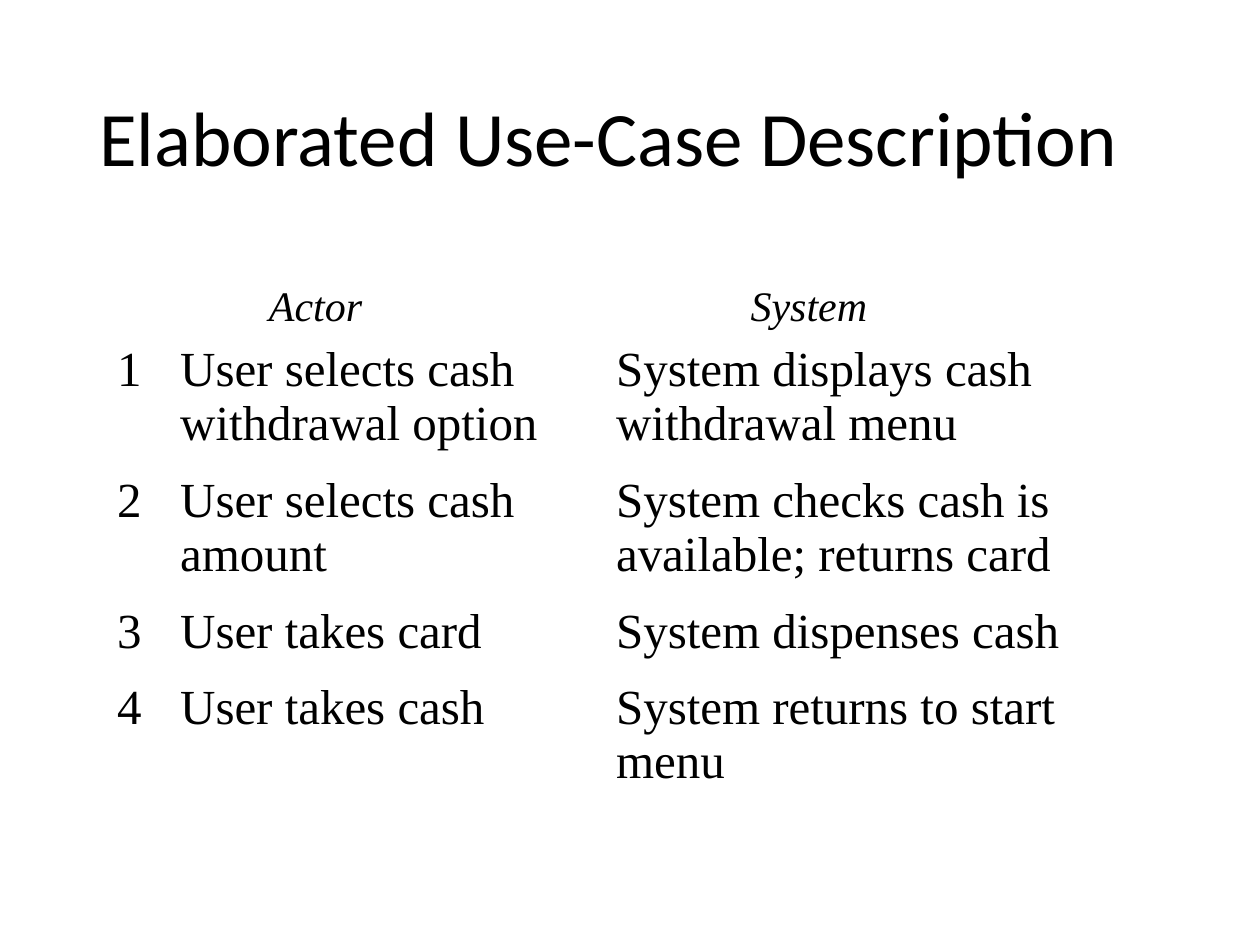
import dataclasses

import pptx
import pptx.dml.color
import pptx.enum.text
import pptx.util

Inches = pptx.util.Inches
Pt = pptx.util.Pt
ALIGN = pptx.enum.text.PP_ALIGN
ANCHOR = pptx.enum.text.MSO_ANCHOR

COLORS = {"text": "000000", "page": "FFFFFF"}
SERIF = "Times New Roman"
COLS = (0.5, 3.46, 3.96)
ROWS = (1.04, 1.04, 0.6, 1.04)
STEPS = (
    ("User selects cash withdrawal option", "System displays cash withdrawal menu"),
    ("User selects cash amount", "System checks cash is available; returns card"),
    ("User takes card", "System dispenses cash"),
    ("User takes cash", "System returns to start menu"),
)


@dataclasses.dataclass(frozen=True)
class Label:
    text: str
    left: float
    top: float
    width: float
    height: float
    size: float = 24
    font: str = SERIF
    italic: bool = True
    align: ALIGN = ALIGN.CENTER
    anchor: ANCHOR = ANCHOR.TOP
    lines: float = 1.0


LABELS = (
    Label("Elaborated Use-Case Description", 0.69, 0.4, 8.62, 1.45, 44, "Calibri",
          False, ALIGN.LEFT, ANCHOR.MIDDLE, 0.9),
    Label("Actor", 1.17, 2.17, 2.67, 0.5),
    Label("System", 4.92, 2.17, 3, 0.5),
)


def style(para, size: float, font: str, italic: bool = False) -> None:
    for run in para.runs:
        run.font.size = Pt(size)
        run.font.name = font
        run.font.italic = italic
        run.font.color.rgb = pptx.dml.color.RGBColor.from_string(COLORS["text"])


def add_label(slide, label: Label) -> None:
    box = slide.shapes.add_textbox(Inches(label.left), Inches(label.top),
                                   Inches(label.width), Inches(label.height))
    frame = box.text_frame
    frame.text = label.text
    frame.word_wrap = True
    frame.vertical_anchor = label.anchor
    para = frame.paragraphs[0]
    para.alignment = label.align
    para.line_spacing = label.lines
    style(para, label.size, label.font, label.italic)


def add_steps(slide) -> None:
    """Add the numbered table of actor and system steps."""
    table = slide.shapes.add_table(len(ROWS), len(COLS), Inches(0.83), Inches(2.67),
                                   Inches(sum(COLS)), Inches(sum(ROWS))).table
    table.first_row = False
    table.horz_banding = False
    for col, width in zip(table.columns, COLS):
        col.width = Inches(width)
    for num, (row, height, step) in enumerate(zip(table.rows, ROWS, STEPS), 1):
        row.height = Inches(height)
        for cell, text in zip(row.cells, (str(num), *step)):
            cell.fill.background()
            cell.text_frame.text = text
            para = cell.text_frame.paragraphs[0]
            para.space_before = Pt(5.6)
            style(para, 28, SERIF)


def main() -> None:
    deck = pptx.Presentation()
    deck.slide_width = Inches(10)
    deck.slide_height = Inches(7.5)
    slide = deck.slides.add_slide(deck.slide_layouts[6])
    fill = slide.background.fill
    fill.solid()
    fill.fore_color.rgb = pptx.dml.color.RGBColor.from_string(COLORS["page"])
    add_steps(slide)
    for label in LABELS:
        add_label(slide, label)
    deck.save("out.pptx")


if __name__ == "__main__":
    main()
